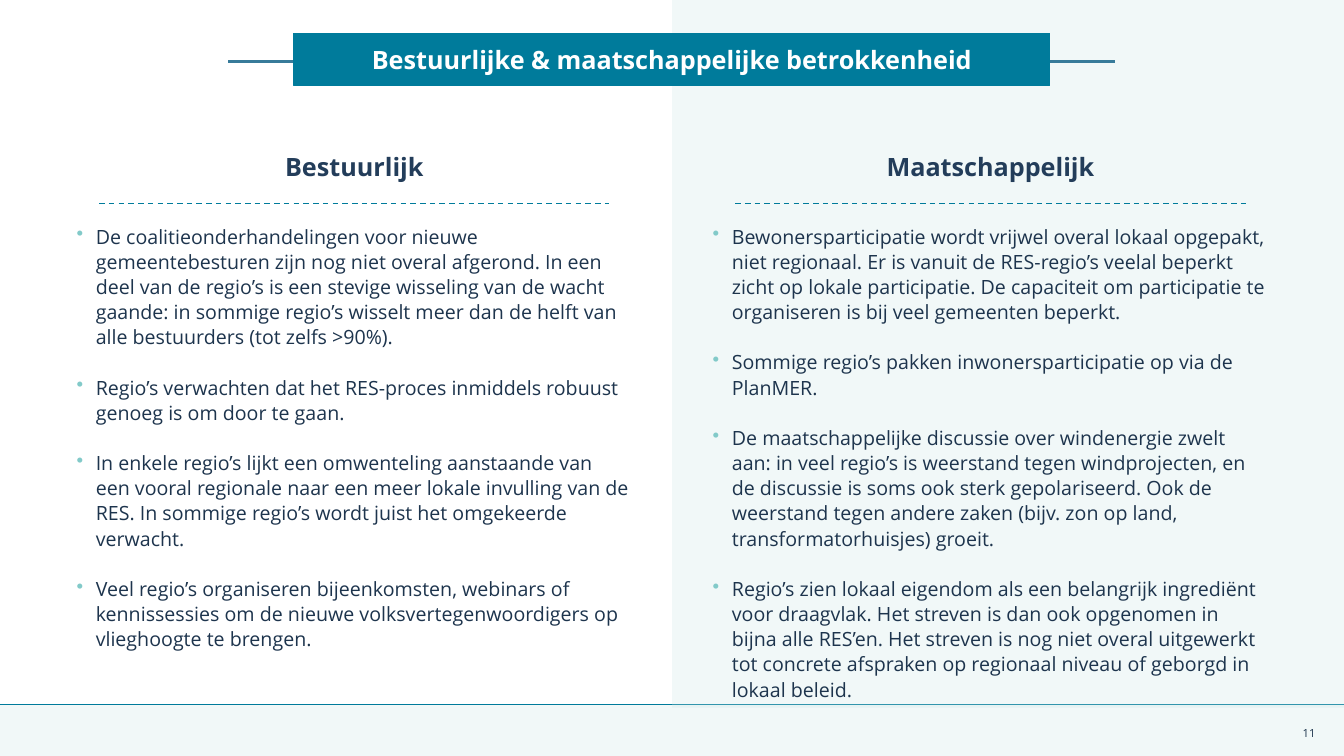
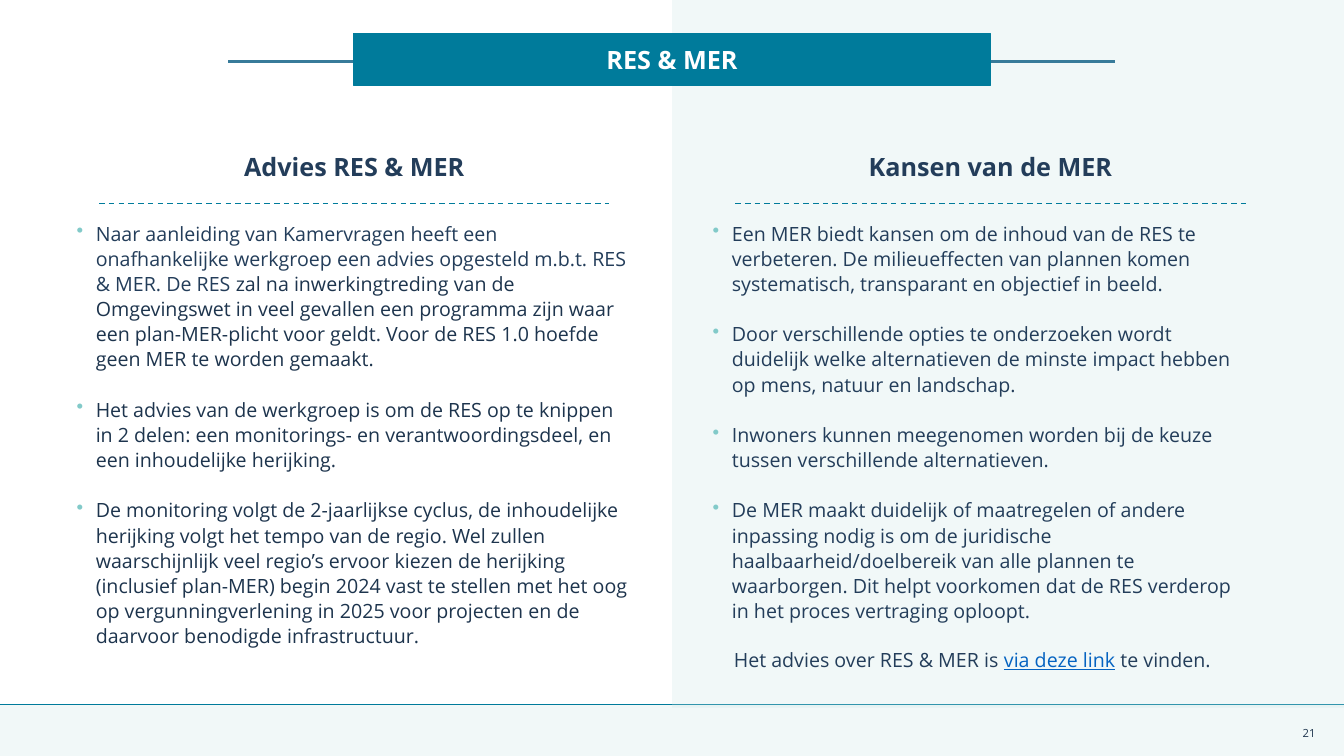
from dataclasses import dataclass
from typing import NamedTuple

from lxml import etree
from pptx import Presentation
from pptx.dml.color import RGBColor
from pptx.enum.dml import MSO_LINE
from pptx.enum.shapes import MSO_CONNECTOR, MSO_SHAPE
from pptx.enum.text import MSO_ANCHOR, PP_ALIGN
from pptx.oxml.ns import qn
from pptx.util import Inches, Pt

RECT, STRAIGHT, DASH = MSO_SHAPE.RECTANGLE, MSO_CONNECTOR.STRAIGHT, MSO_LINE.DASH
LEFT, CENTER, RIGHT = PP_ALIGN.LEFT, PP_ALIGN.CENTER, PP_ALIGN.RIGHT
TOP, MIDDLE, BOTTOM = MSO_ANCHOR.TOP, MSO_ANCHOR.MIDDLE, MSO_ANCHOR.BOTTOM
WIDTH, HEIGHT = Inches(13.333), Inches(7.5)
FONT = "Open Sans"
TEAL, RULE, NAVY, INK = "007B9B", "387B9A", "233D5A", "1D344D"
WHITE, FOOTER, PANEL, BULLET, LINK = "FFFFFF", "E4F3F3", "C8E5E6", "82CAC9", "0563C1"
COLUMN_LEFTS, COLUMN_WIDTH = (5.7, 53.03), 41.33
RULE_INSET = 1.68
FOOTER_TOP = 93.2
INDENT = Inches(0.19)


class Box(NamedTuple):
    """Left, top, width and height as percentages of the slide."""
    left: float
    top: float
    width: float
    height: float


class Run(NamedTuple):
    """A stretch of text in one colour."""
    text: str
    color: str = INK
    underline: bool = False


@dataclass(frozen=True)
class Column:
    """A heading above bulleted paragraphs."""
    heading: str
    items: tuple[tuple[Run, ...], ...]
    width: float = COLUMN_WIDTH


@dataclass(frozen=True)
class Page:
    """The content of one slide."""
    title: str
    number: str
    title_width: float
    body_top: float
    columns: tuple[Column, Column]
    closing: tuple[Run, ...] = ()


def items(*texts: str, color: str = INK) -> tuple[tuple[Run, ...], ...]:
    """Turn each text into a paragraph of one run."""
    return tuple((Run(text, color),) for text in texts)


PAGES = (
    Page("Bestuurlijke & maatschappelijke betrokkenheid", "11", 56.25, 29.47, (
        Column("Bestuurlijk", items(
            "De coalitieonderhandelingen voor nieuwe gemeentebesturen zijn nog niet overal afgerond. "
            "In een deel van de regio’s is een stevige wisseling van de wacht gaande: in sommige "
            "regio’s wisselt meer dan de helft van alle bestuurders (tot zelfs >90%).",
            "Regio’s verwachten dat het RES-proces inmiddels robuust genoeg is om door te gaan.",
            "In enkele regio’s lijkt een omwenteling aanstaande van een vooral regionale naar een "
            "meer lokale invulling van de RES. In sommige regio’s wordt juist het omgekeerde verwacht.",
            "Veel regio’s organiseren bijeenkomsten, webinars of kennissessies om de nieuwe "
            "volksvertegenwoordigers op vlieghoogte te brengen.")),
        Column("Maatschappelijk", items(
            "Bewonersparticipatie wordt vrijwel overal lokaal opgepakt, niet regionaal. Er is vanuit "
            "de RES-regio’s veelal beperkt zicht op lokale participatie. De capaciteit om "
            "participatie te organiseren is bij veel gemeenten beperkt.",
            "Sommige regio’s pakken inwonersparticipatie op via de PlanMER.",
            "De maatschappelijke discussie over windenergie zwelt aan: in veel regio’s is weerstand "
            "tegen windprojecten, en de discussie is soms ook sterk gepolariseerd. Ook de weerstand "
            "tegen andere zaken (bijv. zon op land, transformatorhuisjes) groeit.",
            "Regio’s zien lokaal eigendom als een belangrijk ingrediënt voor draagvlak. Het streven "
            "is dan ook opgenomen in bijna alle RES’en. Het streven is nog niet overal uitgewerkt "
            "tot concrete afspraken op regionaal niveau of geborgd in lokaal beleid.")))),
    Page("RES & MER", "21", 47.33, 29.07, (
        Column("Advies RES & MER", (
            (Run("Naar aanleiding van Kamervragen heeft een onafhankelijke werkgroep een advies "
                 "opgesteld m.b.t. RES & MER. De RES ", NAVY),
             Run("zal na inwerkingtreding van de Omgevingswet in veel gevallen een programma zijn "
                 "waar een plan-MER-plicht voor geldt. Voor de RES 1.0 hoefde geen MER te worden "
                 "gemaakt.")),
            *items(
                "Het advies van de werkgroep is om de RES op te knippen in 2 delen: een monitorings- "
                "en verantwoordingsdeel, en een inhoudelijke herijking.",
                "De monitoring volgt de 2-jaarlijkse cyclus, de inhoudelijke herijking volgt het "
                "tempo van de regio. Wel zullen waarschijnlijk veel regio’s ervoor kiezen de "
                "herijking (inclusief plan-MER) begin 2024 vast te stellen met het oog op "
                "vergunningverlening in 2025 voor projecten en de daarvoor benodigde "
                "infrastructuur."))),
        Column("Kansen van de MER", items(
            "Een MER biedt kansen om de inhoud van de RES te verbeteren. De milieueffecten van "
            "plannen komen systematisch, transparant en objectief in beeld.",
            "Door verschillende opties te onderzoeken wordt duidelijk welke alternatieven de "
            "minste impact hebben op mens, natuur en landschap.",
            "Inwoners kunnen meegenomen worden bij de keuze tussen verschillende alternatieven.",
            "De MER maakt duidelijk of maatregelen of andere inpassing nodig is om de juridische "
            "haalbaarheid/doelbereik van alle plannen te waarborgen. Dit helpt voorkomen dat de "
            "RES verderop in het proces vertraging oploopt.", color=NAVY), 40.05)),
        (Run("Het advies over RES & MER is ", NAVY), Run("via deze link", LINK, True),
         Run(" te vinden.", NAVY))),
)


def rgb(color: str) -> RGBColor:
    """Return the colour of a hex string."""
    return RGBColor.from_string(color)


def x(share: float) -> int:
    """Convert a percentage of the slide width to a length."""
    return round(WIDTH * share / 100)


def y(share: float) -> int:
    """Convert a percentage of the slide height to a length."""
    return round(HEIGHT * share / 100)


def place(box: Box) -> tuple[int, int, int, int]:
    """Convert a box to lengths."""
    return x(box.left), y(box.top), x(box.width), y(box.height)


def add_rect(s, box: Box, color: str, opacity: int = 100):
    """Draw a filled rectangle without outline."""
    sp = s.shapes.add_shape(RECT, *place(box))
    sp.shadow.inherit = False
    sp.fill.solid()
    sp.fill.fore_color.rgb = rgb(color)
    sp.line.fill.background()
    if opacity < 100:
        tint = sp.element.spPr.find(qn("a:solidFill")).find(qn("a:srgbClr"))
        etree.SubElement(tint, qn("a:alpha"), val=str(opacity * 1000))
    return sp


def add_rule(s, left: float, right: float, top: float, color: str = TEAL,
             weight: float = 1, dash: MSO_LINE | None = None) -> None:
    """Draw a horizontal line."""
    line = s.shapes.add_connector(STRAIGHT, x(left), y(top), x(right), y(top))
    line.line.color.rgb = rgb(color)
    line.line.width = Pt(weight)
    if dash:
        line.line.dash_style = dash
    etree.SubElement(line.element.spPr, qn("a:effectLst"))


def add_bullet(p) -> None:
    """Give a paragraph a coloured bullet with a hanging indent."""
    ppr = p._p.get_or_add_pPr()
    ppr.set("marL", str(INDENT))
    ppr.set("indent", str(-INDENT))
    tint = etree.SubElement(ppr, qn("a:buClr"))
    etree.SubElement(tint, qn("a:srgbClr"), val=BULLET)
    etree.SubElement(ppr, qn("a:buChar"), char="•")


def write(sp, paragraphs: tuple[tuple[Run, ...], ...], *, size: float = 14, bold: bool = False,
          align: PP_ALIGN = LEFT, anchor: MSO_ANCHOR = TOP, spacing: float = 1,
          gap: float = 0, bullets: bool = False, inset_top: float = 0) -> None:
    """Fill a shape with formatted paragraphs."""
    tf = sp.text_frame
    tf.word_wrap = True
    tf.vertical_anchor = anchor
    tf.margin_left = tf.margin_right = tf.margin_bottom = 0
    tf.margin_top = Inches(inset_top)
    for i, runs in enumerate(paragraphs):
        p = tf.add_paragraph() if i else tf.paragraphs[0]
        p.alignment = align
        p.line_spacing = spacing
        p.space_before = Pt(gap if i else 0)
        if bullets:
            add_bullet(p)
        for text, color, underline in runs:
            r = p.add_run()
            r.text = text
            r.font.name, r.font.size, r.font.bold = FONT, Pt(size), bold
            r.font.color.rgb = rgb(color)
            if underline:
                r.font.underline = True


def add_text(s, box: Box, paragraphs: tuple[tuple[Run, ...], ...], **style) -> None:
    """Add a text box with formatted paragraphs."""
    write(s.shapes.add_textbox(*place(box)), paragraphs, **style)


def add_frame(s, page: Page) -> None:
    """Draw the bands, rules, title and number that all slides share."""
    add_rect(s, Box(0, FOOTER_TOP, 100, 100 - FOOTER_TOP), FOOTER, 50)
    add_rule(s, 0, 100, FOOTER_TOP)
    add_rect(s, Box(50, 0, 50, 93.6), PANEL, 25)
    add_rule(s, 17, 83, 8.13, RULE, 2.25)
    title = add_rect(s, Box(50 - page.title_width / 2, 4.4, page.title_width, 6.93), TEAL)
    title.line.color.rgb = rgb(TEAL)
    title.line.width = Pt(0.75)
    write(title, items(page.title, color=WHITE), size=18, bold=True, align=CENTER,
          anchor=MIDDLE, spacing=0.9, inset_top=0.03)
    add_text(s, Box(94.28, 94.27, 3.6, 5.33), items(page.number), size=8, align=RIGHT,
             anchor=MIDDLE)


def add_column(s, column: Column, left: float, top: float) -> None:
    """Draw a heading, its dashed rule and the bullets below."""
    add_text(s, Box(left, 19.6, COLUMN_WIDTH, 4.4), items(column.heading, color=NAVY),
             size=18, bold=True, align=CENTER, anchor=BOTTOM)
    add_rule(s, left + RULE_INSET, left + COLUMN_WIDTH - RULE_INSET, 26.93, dash=DASH)
    add_text(s, Box(left, top, column.width, 62), column.items, spacing=1.07, gap=18,
             bullets=True)


def main() -> None:
    """Build and save the presentation."""
    prs = Presentation()
    prs.slide_width, prs.slide_height = WIDTH, HEIGHT
    for page in PAGES:
        s = prs.slides.add_slide(prs.slide_layouts[6])
        add_frame(s, page)
        for column, left in zip(page.columns, COLUMN_LEFTS):
            add_column(s, column, left, page.body_top)
        if page.closing:
            add_text(s, Box(54.6, 84.8, 40, 4.67), (page.closing,), spacing=1.07,
                     inset_top=0.05)
    prs.save("out.pptx")


if __name__ == "__main__":
    main()
